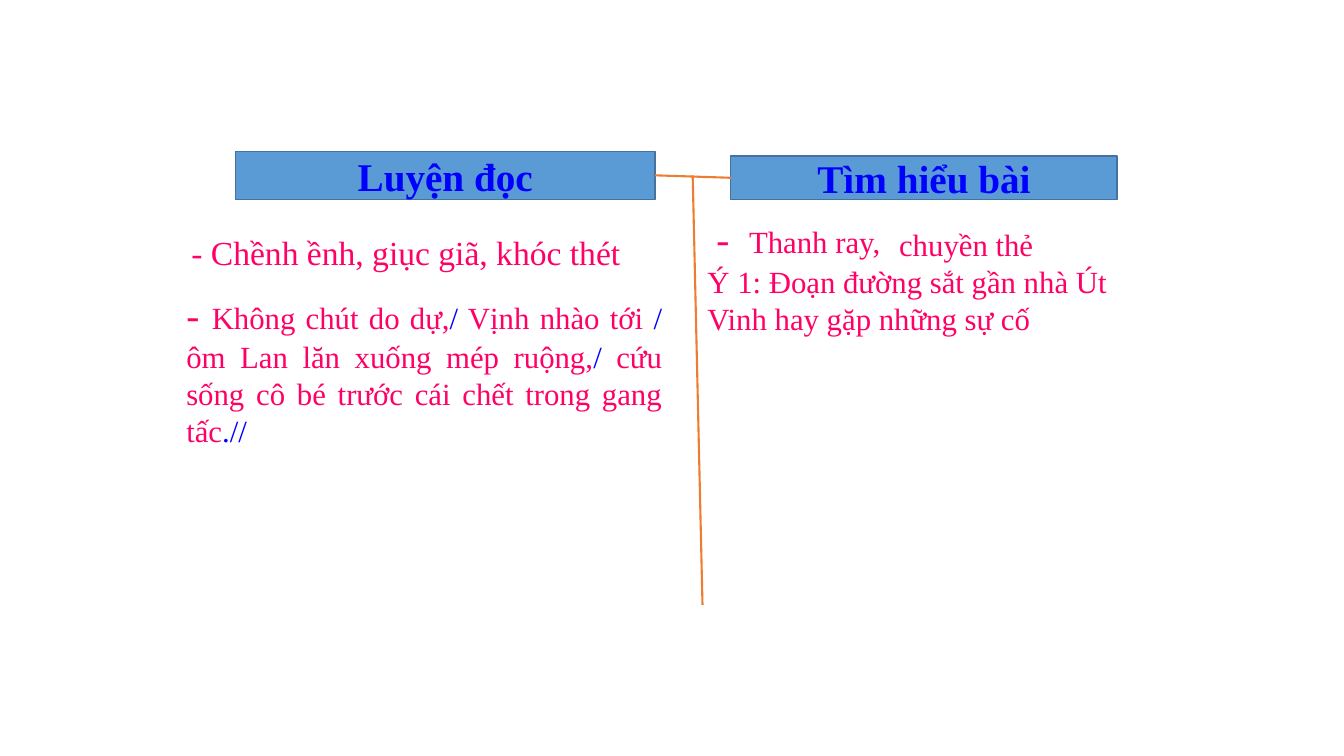
from pptx import Presentation
from pptx.dml.color import RGBColor
from pptx.enum.shapes import MSO_CONNECTOR as Line, MSO_SHAPE as Shape
from pptx.enum.text import MSO_ANCHOR as Anchor, MSO_AUTO_SIZE as Fit, PP_ALIGN as Align
from pptx.oxml.ns import qn
from pptx.util import Pt
from lxml import etree

FONT = "Times New Roman"
PINK, BLUE = "FF0066", "0000FF"


def color(code):
    return RGBColor.from_string(code)


def add_runs(para, runs, bold=False):
    for text, size, code in runs:
        run = para.add_run()
        run.text = text
        font = run.font
        font.name, font.size, font.bold = FONT, Pt(size), bold
        font.color.rgb = color(code)


def add_text(slide, box, runs, align=Align.JUSTIFY, wrap=True, hang=0):
    frame = slide.shapes.add_textbox(*map(Pt, box)).text_frame
    frame.word_wrap = wrap
    frame.auto_size = Fit.SHAPE_TO_FIT_TEXT
    para = frame.paragraphs[0]
    para.alignment = align
    if hang:
        props = para._p.get_or_add_pPr()
        props.set("marL", str(Pt(hang)))
        props.set("indent", str(-Pt(hang)))
    add_runs(para, runs)


def add_head(slide, box, title):
    head = slide.shapes.add_shape(Shape.RECTANGLE, *map(Pt, box))
    head.shadow.inherit = False
    head.fill.solid()
    head.fill.fore_color.rgb = color("5B9BD5")
    head.line.color.rgb = color("43739E")
    head.line.width = Pt(1)
    frame = head.text_frame
    frame.word_wrap = True
    frame.vertical_anchor = Anchor.MIDDLE
    frame.paragraphs[0].alignment = Align.CENTER
    add_runs(frame.paragraphs[0], [(title, 28, BLUE)], bold=True)
    return head


def add_line(slide, ends):
    line = slide.shapes.add_connector(Line.STRAIGHT, *map(Pt, ends))
    line.line.color.rgb = color("ED7D31")
    line.line.width = Pt(1.5)
    etree.SubElement(line._element.spPr, qn("a:effectLst"))
    return line


def add_frame(slide, left, top):
    # Two headings, the divider and the link between the headings
    read = add_head(slide, (left, top, 300, 34.5), "Luyện đọc")
    learn = add_head(slide, (left + 354, top + 3.5, 276, 31), "Tìm hiểu bài")
    add_line(slide, (left + 326.8, top + 17.3, left + 333.8, top + 324))
    link = add_line(slide, (left + 300, top + 17.3, left + 354, top + 19))
    link.begin_connect(read, 3)
    link.end_connect(learn, 1)


def add_reading(slide, left, top, width):
    # Hard words, then the sentence with its pauses marked in blue
    parts = ["Không chút do dự,", "/", " Vịnh nhào tới ", "/",
             " ôm Lan lăn xuống mép ruộng,", "/",
             " cứu sống cô bé trước cái chết trong gang tấc", ".//"]
    marked = [(text, 22, (PINK, BLUE)[i % 2]) for i, text in enumerate(parts)]
    add_text(slide, (left, top + 42, width, 121),
             [("- ", 28, PINK)] + marked)
    add_text(slide, (left + 3.6, top, 324, 36.5),
             [("- Chềnh ềnh, giục giã, khóc thét", 24, PINK)], wrap=False)


def add_meaning(slide, left, top, width):
    # New words, then the main idea
    add_text(slide, (left + 6.5, top, 134.6, 41),
             [("-\t", 28, PINK), ("Thanh ray,", 22, PINK)],
             wrap=False, hang=23.3)
    add_text(slide, (left + 137, top + 8, 138, 34), [("chuyền thẻ", 22, PINK)])
    add_text(slide, (left, top + 34.5, width, 60.5),
             [("Ý 1: Đoạn đường sắt gần nhà Út Vinh hay gặp những sự cố", 22, PINK)],
             align=Align.LEFT)


def main():
    deck = Presentation()
    deck.slide_width, deck.slide_height = Pt(960), Pt(540)
    slide = deck.slides.add_slide(deck.slide_layouts[6])
    add_frame(slide, 168, 108)
    add_reading(slide, 126, 162, 354)
    add_meaning(slide, 498.2, 149.8, 306)
    deck.save("out.pptx")


if __name__ == "__main__":
    main()
